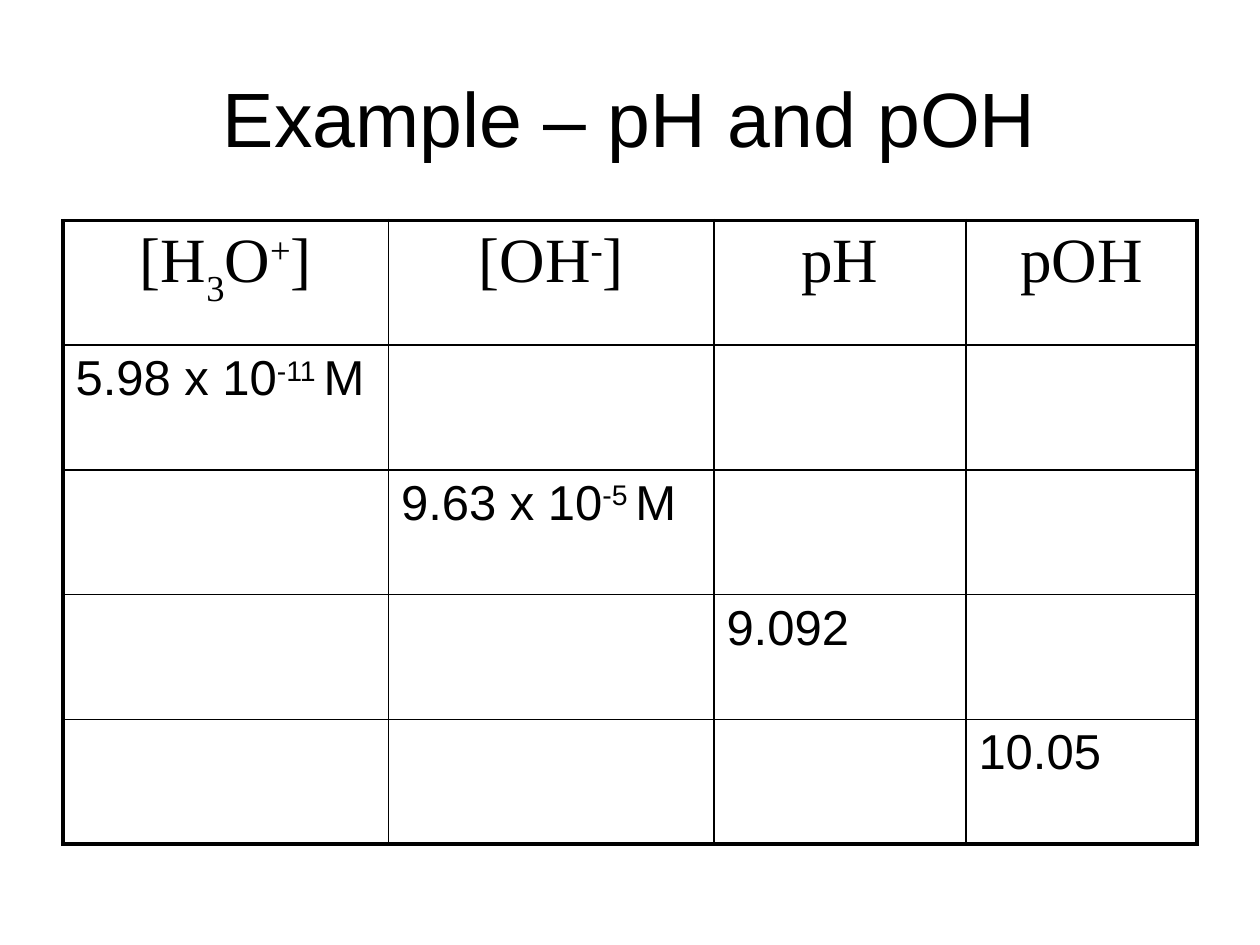
from lxml.etree import SubElement
from pptx import Presentation
from pptx.dml.color import RGBColor
from pptx.enum.text import MSO_ANCHOR, PP_ALIGN
from pptx.oxml.ns import qn
from pptx.util import Pt

BLACK = RGBColor(0, 0, 0)
WHITE = RGBColor(255, 255, 255)
COLS = [186, 186, 144, 132]
ROW = 71.28
HEADS = [
    [("[H", 0), ("3", -30), ("O", 0), ("+", 30), ("]", 0)],
    [("[OH", 0), ("-", 30), ("]", 0)],
    [("pH", 0)],
    [("pOH", 0)],
]
GIVEN = [
    [("5.98 x 10", 0), ("-11 ", 30), ("M", 0)],
    [("9.63 x 10", 0), ("-5 ", 30), ("M", 0)],
    [("9.092", 0)],
    [("10.05", 0)],
]


def write(frame, runs, size, face, align):
    para = frame.paragraphs[0]
    para.alignment = align
    for text, base in runs:
        run = para.add_run()
        run.text = text
        run.font.size = Pt(size)
        run.font.name = face
        run.font.color.rgb = BLACK
        if base:
            run.font._element.set("baseline", str(base * 1000))


def add_title(slide, text):
    box = slide.shapes.add_textbox(Pt(36), Pt(21.6), Pt(648), Pt(90))
    frame = box.text_frame
    frame.word_wrap = True
    frame.vertical_anchor = MSO_ANCHOR.MIDDLE
    write(frame, [(text, 0)], 44, "Arial", PP_ALIGN.CENTER)


def add_edges(cell, outer):
    props = cell._tc.get_or_add_tcPr()
    for side in "LRTB":
        width = Pt(2.25 if side in outer else 1)
        line = SubElement(props, qn(f"a:ln{side}"), w=str(width))
        fill = SubElement(line, qn("a:solidFill"))
        SubElement(fill, qn("a:srgbClr"), val=str(BLACK))


def find_outer(row, col):
    tests = {"L": col == 0, "R": col == len(COLS) - 1,
             "T": row == 0, "B": row == len(GIVEN)}
    return [side for side, hit in tests.items() if hit]


def add_grid(slide):
    count = len(GIVEN) + 1
    frame = slide.shapes.add_table(
        count, len(COLS), Pt(36), Pt(126), Pt(sum(COLS)), Pt(ROW * count))
    table = frame.table
    table.first_row = False
    table.horz_banding = False
    for col, width in enumerate(COLS):
        table.columns[col].width = Pt(width)
    for row in range(count):
        table.rows[row].height = Pt(ROW)
        for col in range(len(COLS)):
            cell = table.cell(row, col)
            add_edges(cell, find_outer(row, col))
            cell.fill.background()
    for col, runs in enumerate(HEADS):
        write(table.cell(0, col).text_frame, runs, 36,
              "Times New Roman", PP_ALIGN.CENTER)
    for step, runs in enumerate(GIVEN):
        write(table.cell(step + 1, step).text_frame, runs, 28,
              "Arial", PP_ALIGN.LEFT)


def main():
    deck = Presentation()
    deck.slide_width = Pt(720)
    deck.slide_height = Pt(540)
    slide = deck.slides.add_slide(deck.slide_layouts[6])
    slide.background.fill.solid()
    slide.background.fill.fore_color.rgb = WHITE
    add_title(slide, "Example – pH and pOH")
    add_grid(slide)
    deck.save("out.pptx")


if __name__ == "__main__":
    main()
